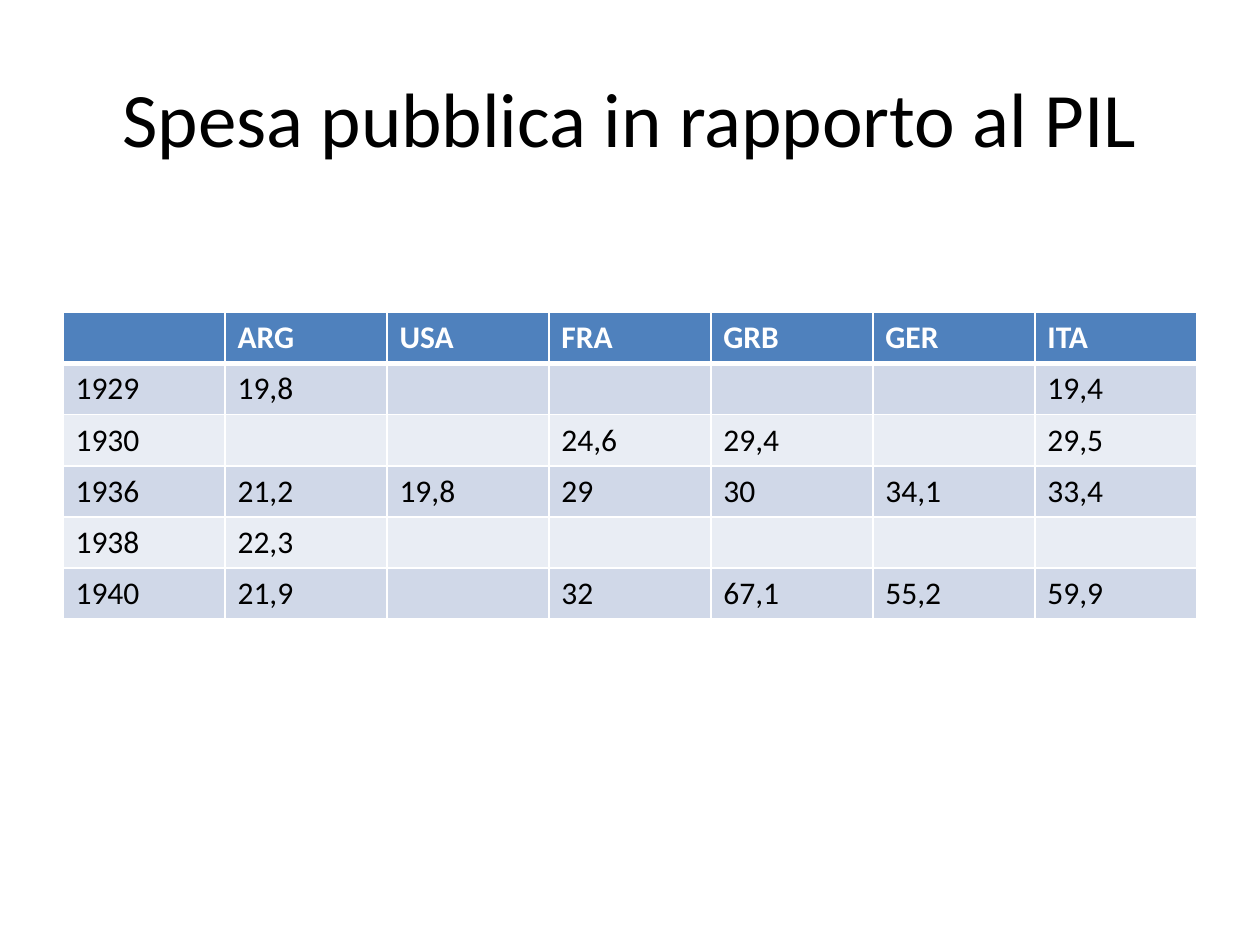
from lxml import etree
from pptx import Presentation
from pptx.dml.color import RGBColor
from pptx.enum.text import MSO_ANCHOR, PP_ALIGN
from pptx.oxml.ns import qn
from pptx.util import Cm, Pt

FONT = "Calibri"
BLACK = RGBColor(0x00, 0x00, 0x00)
WHITE = RGBColor(0xFF, 0xFF, 0xFF)
HEADER_BLUE = RGBColor(0x4F, 0x81, 0xBD)
BAND_DARK = RGBColor(0xD0, 0xD8, 0xE8)
BAND_LIGHT = RGBColor(0xE9, 0xED, 0xF4)

LEFT = Cm(1.27)
WIDTH = Cm(22.86)
ROW_HEIGHT = Cm(1.03)

TITLE = "Spesa pubblica in rapporto al PIL"
SPENDING = [
    ["", "ARG", "USA", "FRA", "GRB", "GER", "ITA"],
    ["1929", "19,8", "", "", "", "", "19,4"],
    ["1930", "", "", "24,6", "29,4", "", "29,5"],
    ["1936", "21,2", "19,8", "29", "30", "34,1", "33,4"],
    ["1938", "22,3", "", "", "", "", ""],
    ["1940", "21,9", "", "32", "67,1", "55,2", "59,9"],
]


def format_text(frame, size, color, bold=False):
    for para in frame.paragraphs:
        for span in para.runs:
            span.font.name = FONT
            span.font.size = Pt(size)
            span.font.bold = bold
            span.font.color.rgb = color


def add_title(page):
    title = page.shapes.title
    title.left, title.top = LEFT, Cm(0.76)
    title.width, title.height = WIDTH, Cm(3.18)
    frame = title.text_frame
    frame.text = TITLE
    frame.vertical_anchor = MSO_ANCHOR.MIDDLE
    frame.paragraphs[0].alignment = PP_ALIGN.CENTER
    format_text(frame, 44, BLACK)


def set_borders(cell, top, bottom):
    properties = cell._tc.get_or_add_tcPr()
    widths = {"a:lnL": 1, "a:lnR": 1, "a:lnT": top, "a:lnB": bottom}
    for position, (tag, width) in enumerate(widths.items()):
        line = etree.Element(qn(tag), w=str(Pt(width)))
        fill = etree.SubElement(line, qn("a:solidFill"))
        etree.SubElement(fill, qn("a:srgbClr"), val=str(WHITE))
        properties.insert(position, line)


def fill_cell(cell, text, row):
    is_header = row == 0
    cell.text = text
    format_text(cell.text_frame, 18, WHITE if is_header else BLACK, is_header)
    band = BAND_DARK if row % 2 else BAND_LIGHT
    cell.fill.solid()
    cell.fill.fore_color.rgb = HEADER_BLUE if is_header else band
    set_borders(cell, top=3 if row == 1 else 1, bottom=3 if is_header else 1)


def add_spending_table(page):
    rows, columns = len(SPENDING), len(SPENDING[0])
    table = page.shapes.add_table(
        rows, columns, LEFT, Cm(6.3), WIDTH, ROW_HEIGHT * rows
    ).table
    for row, values in enumerate(SPENDING):
        table.rows[row].height = ROW_HEIGHT
        for column, text in enumerate(values):
            fill_cell(table.cell(row, column), text, row)


def main():
    deck = Presentation()
    deck.slide_width, deck.slide_height = Cm(25.4), Cm(19.05)
    page = deck.slides.add_slide(deck.slide_layouts[5])
    add_title(page)
    add_spending_table(page)
    deck.save("out.pptx")


if __name__ == "__main__":
    main()
